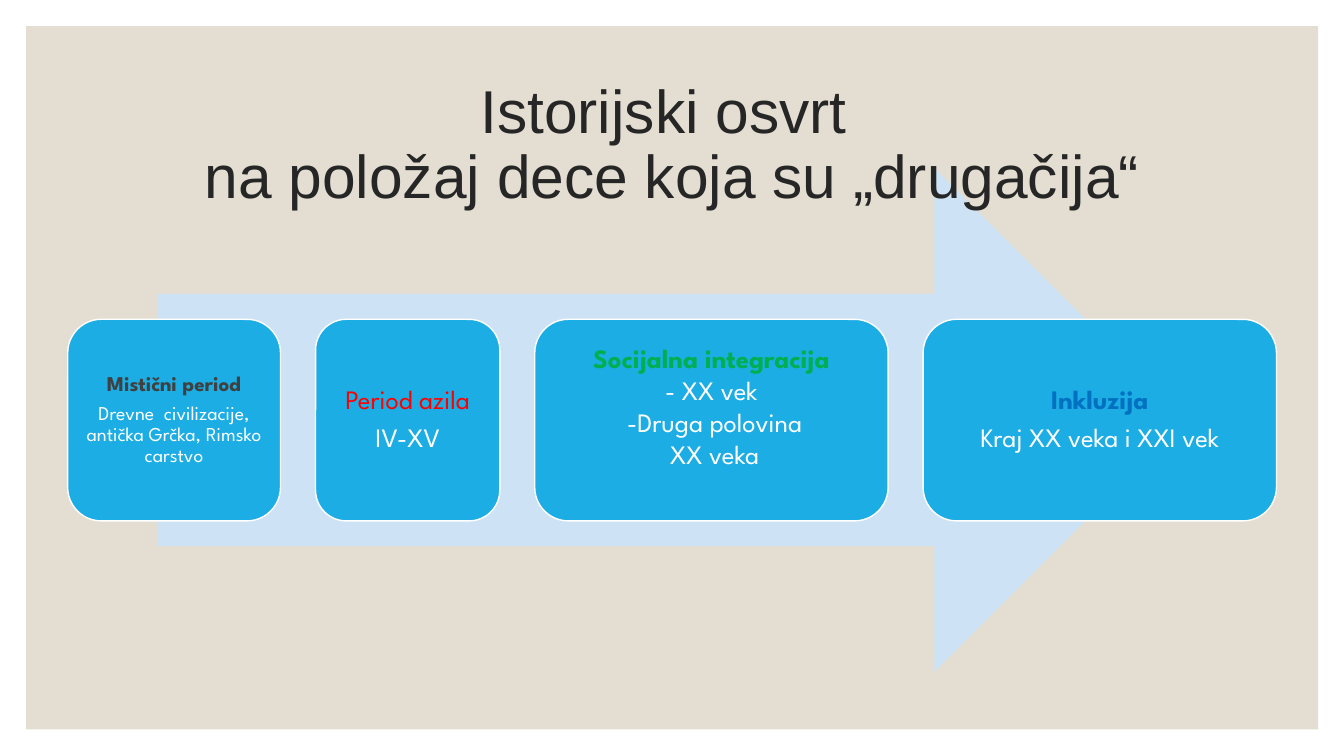
from dataclasses import dataclass

from pptx import Presentation
from pptx.dml.color import RGBColor
from pptx.enum.shapes import MSO_SHAPE
from pptx.enum.text import MSO_ANCHOR, MSO_AUTO_SIZE, PP_ALIGN
from pptx.shapes.autoshape import Shape
from pptx.slide import Slide
from pptx.text.text import _Paragraph as Paragraph
from pptx.util import Pt

RECTANGLE = MSO_SHAPE.RECTANGLE
RIGHT_ARROW = MSO_SHAPE.RIGHT_ARROW
ROUNDED = MSO_SHAPE.ROUNDED_RECTANGLE
CENTER = PP_ALIGN.CENTER
MIDDLE = MSO_ANCHOR.MIDDLE
NO_AUTOFIT = MSO_AUTO_SIZE.NONE

COLORS = {
    "panel": "E3DED1",
    "arrow": "CDE3F5",
    "card": "1CADE4",
    "white": "FFFFFF",
    "title": "262626",
    "mystic": "404040",
    "asylum": "FF0000",
    "integration": "00B050",
    "inclusion": "0070C0",
}
TITLE_FONT = "Arial"
CARD_FONT = "League Spartan"

CARDS_LEFT, CARDS_TOP, CARD_HEIGHT, CARD_GAP = 48.4, 228.1, 144, 25


@dataclass(frozen=True)
class Period:
    width: float
    heading: str
    color: str
    details: tuple[str, ...]
    heading_size: float = 19
    detail_size: float = 19
    bold: bool = True
    inset: float = 5.7
    bottom_inset: float = 5.7
    line_spacing: float = 0.9
    space_ratio: float = 0.35


PERIODS = (
    Period(152, "Mistični period", "mystic",
           ("Drevne  civilizacije, antička Grčka, Rimsko carstvo",),
           heading_size=15, detail_size=14, inset=4.3, bottom_inset=4.3),
    Period(131.6, "Period azila", "asylum", ("IV-XV",), bold=False),
    Period(252.4, "Socijalna integracija", "integration",
           ("- XX vek", " -Druga polovina", " XX veka"),
           bottom_inset=26.4, line_spacing=1.0, space_ratio=0),
    Period(252.4, "Inkluzija", "inclusion", ("Kraj XX veka i XXI vek",)),
)


def rgb(name: str) -> RGBColor:
    return RGBColor.from_string(COLORS[name])


def add_block(slide: Slide, kind: MSO_SHAPE, left: float, top: float,
              width: float, height: float, color: str) -> Shape:
    block = slide.shapes.add_shape(kind, Pt(left), Pt(top), Pt(width), Pt(height))
    block.shadow.inherit = False
    block.fill.solid()
    block.fill.fore_color.rgb = rgb(color)
    block.line.fill.background()
    return block


def format_paragraph(paragraph: Paragraph, font: str, size: float, color: str,
                     bold: bool, line_spacing: float, space_after: float) -> None:
    paragraph.alignment = CENTER
    paragraph.line_spacing = line_spacing
    paragraph.space_before = Pt(0)
    paragraph.space_after = Pt(space_after)
    for run in paragraph.runs:
        run.font.name = font
        run.font.size = Pt(size)
        run.font.bold = bold
        run.font.color.rgb = rgb(color)


def add_card(slide: Slide, period: Period, left: float) -> None:
    card = add_block(slide, ROUNDED, left, CARDS_TOP, period.width, CARD_HEIGHT, "card")
    card.line.color.rgb = rgb("white")
    card.line.width = Pt(1)

    frame = card.text_frame
    frame.word_wrap = True
    frame.vertical_anchor = MIDDLE
    frame.margin_left = frame.margin_right = frame.margin_top = Pt(period.inset)
    frame.margin_bottom = Pt(period.bottom_inset)
    frame.text = "\n".join((period.heading, *period.details))

    heading, *details = frame.paragraphs
    format_paragraph(heading, CARD_FONT, period.heading_size, period.color, period.bold,
                     period.line_spacing, period.heading_size * period.space_ratio)
    for detail in details:
        format_paragraph(detail, CARD_FONT, period.detail_size, "white", False,
                         period.line_spacing, period.detail_size * period.space_ratio)


def set_title(slide: Slide) -> None:
    title = slide.shapes.title
    title.left, title.top, title.width, title.height = Pt(84), Pt(50.4), Pt(792), Pt(108)
    frame = title.text_frame
    frame.auto_size = NO_AUTOFIT
    frame.word_wrap = True
    frame.vertical_anchor = MIDDLE
    frame.text = "Istorijski osvrt \vna položaj dece koja su „drugačija“"
    format_paragraph(frame.paragraphs[0], TITLE_FONT, 43.2, "title", False, 0.9, 0)
    # The title lies in front of the arrow
    title.element.getparent().append(title.element)


def main() -> None:
    presentation = Presentation()
    presentation.slide_width, presentation.slide_height = Pt(960), Pt(540)
    slide = presentation.slides.add_slide(presentation.slide_layouts[5])

    # Background panel and timeline arrow
    add_block(slide, RECTANGLE, 18.7, 18.7, 922.8, 502.4, "panel")
    add_block(slide, RIGHT_ARROW, 113, 120, 734.4, 360, "arrow")

    # Historical periods, left to right
    left = CARDS_LEFT
    for period in PERIODS:
        add_card(slide, period, left)
        left += period.width + CARD_GAP

    set_title(slide)
    presentation.save("out.pptx")


if __name__ == "__main__":
    main()
